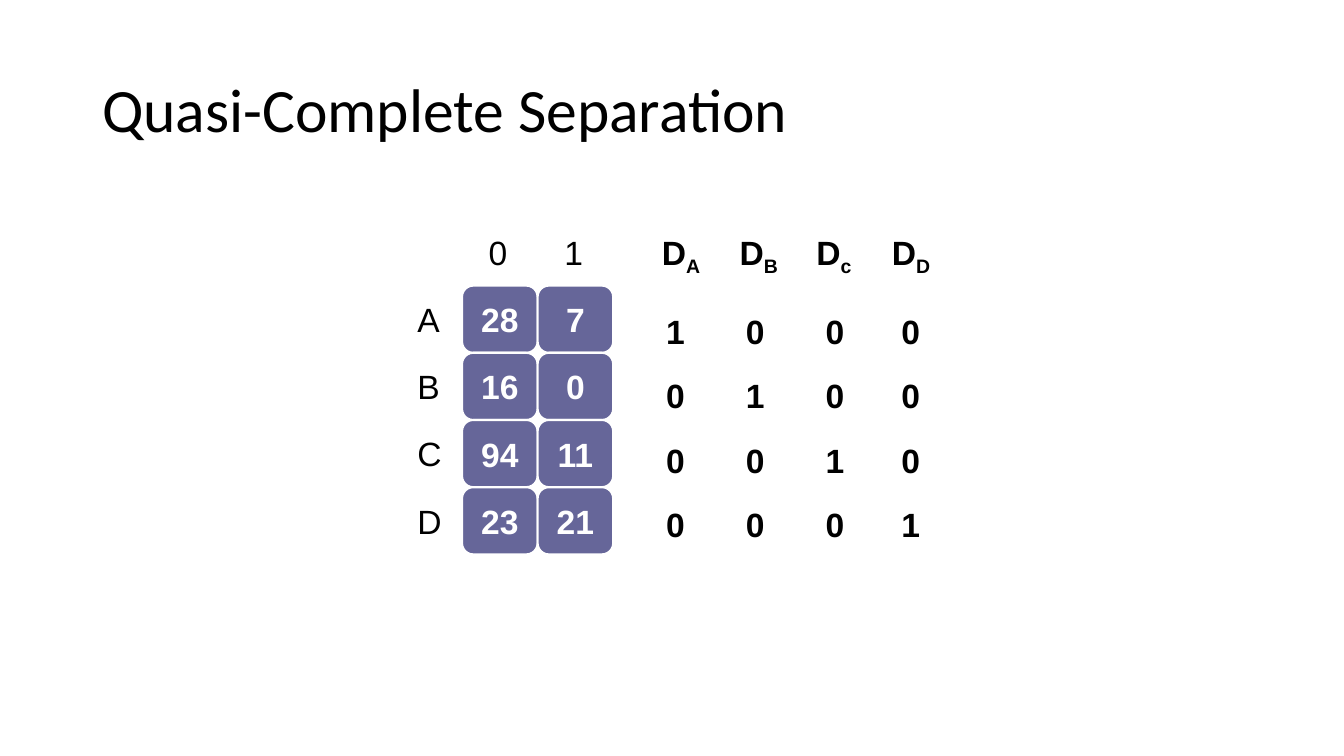
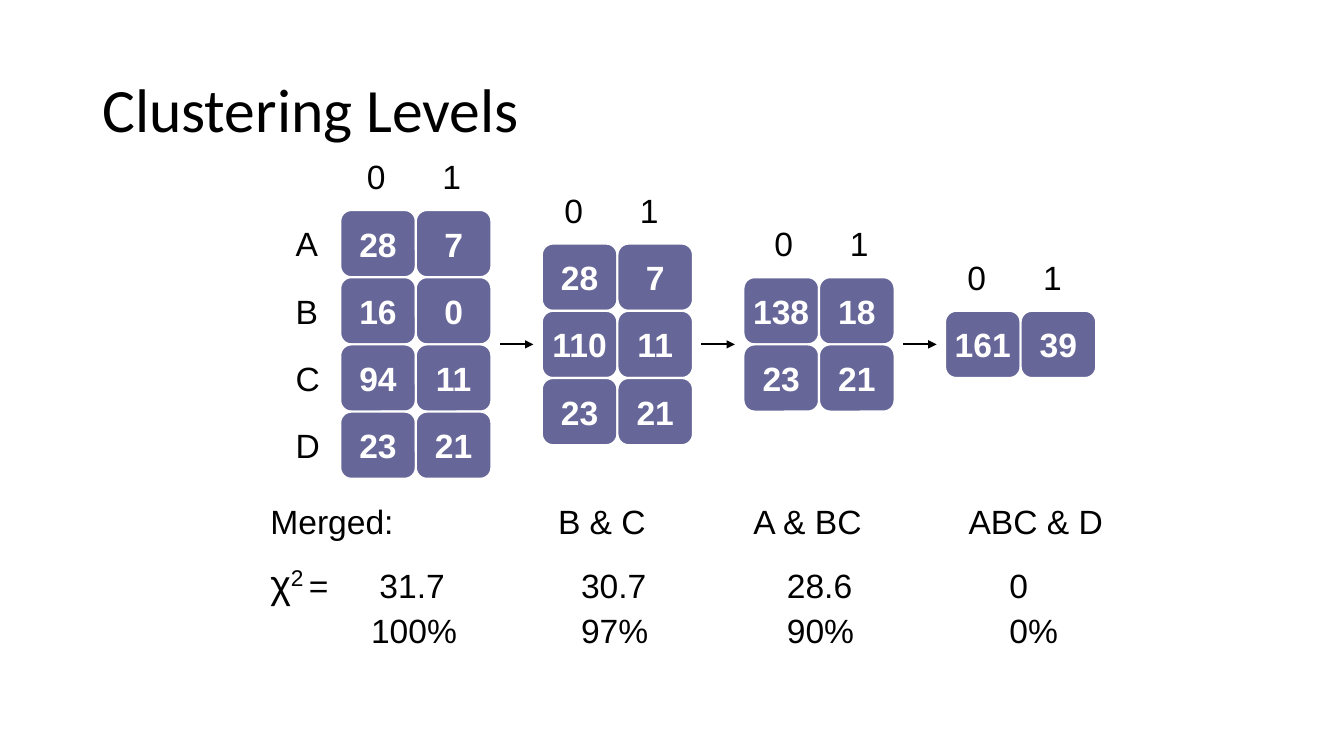
from lxml import etree
from pptx import Presentation
from pptx.dml.color import RGBColor
from pptx.enum.shapes import MSO_CONNECTOR, MSO_SHAPE
from pptx.enum.text import MSO_ANCHOR, PP_ALIGN
from pptx.oxml.ns import qn
from pptx.util import Pt

PX = 9525
COLORS = {"ink": "000000", "cell": "666699", "white": "FFFFFF"}
SANS, HEAD = "Arial", "Calibri"
ROUND = MSO_SHAPE.ROUNDED_RECTANGLE
STRAIGHT = MSO_CONNECTOR.STRAIGHT
MIDDLE, CENTER = MSO_ANCHOR.MIDDLE, PP_ALIGN.CENTER
CELL_W, CELL_H = 72, 64
TEXT_H = 48
COUNTS = [(28, 7), (16, 0), (94, 11), (23, 21)]
LEVELS = "ABCD"


def px(*sizes):
    return [size * PX for size in sizes]


def color(name):
    return RGBColor.from_string(COLORS[name])


def style(para, size=24, bold=False, ink="ink", face=SANS):
    font = para.font
    font.name, font.size, font.bold = face, Pt(size), bold
    font.color.rgb = color(ink)


def text(slide, box, lines, spacing=None, **look):
    """Place one paragraph for each line and return the text frame."""
    frame = slide.shapes.add_textbox(*px(*box)).text_frame
    frame.word_wrap = True
    frame.text = "\n".join(lines)
    for para in frame.paragraphs:
        style(para, **look)
        if spacing:
            para.line_spacing = spacing
    return frame


def add_run(para, words, base=0, size=None):
    """Add a run, raised or lowered by base percent."""
    run = para.add_run()
    run.text = words
    if base:
        run._r.get_or_add_rPr().set("baseline", str(base * 1000))
    if size:
        run.font.size = Pt(size)


def title(slide, words):
    frame = text(slide, (88, 38, 1104, 139), [words], 0.9, size=44, face=HEAD)
    frame.vertical_anchor = MIDDLE


def cell(slide, x, y, value):
    shape = slide.shapes.add_shape(ROUND, *px(x, y, CELL_W, CELL_H))
    shape.shadow.inherit = False
    shape.fill.solid()
    shape.fill.fore_color.rgb = color("cell")
    shape.line.color.rgb = color("white")
    shape.line.width = Pt(1.5)
    frame = shape.text_frame
    frame.word_wrap = False
    frame.vertical_anchor = MIDDLE
    frame.text = str(value)
    para = frame.paragraphs[0]
    para.alignment = CENTER
    style(para, bold=True, ink="white")


def grid(slide, x, y, rows, names="", inset=16):
    """Draw counts from (x, y), with outcomes above and names at the left."""
    for col in range(2):
        text(slide, (x + inset + col * CELL_W, y - 56, 40, TEXT_H), [str(col)])
    for row, name in enumerate(names):
        text(slide, (x - 52, y + 8 + row * CELL_H, 46, TEXT_H), [name])
    for row, pair in enumerate(rows):
        for col, value in enumerate(pair):
            cell(slide, x + col * CELL_W, y + row * CELL_H, value)


def arrow(slide, x, y):
    line = slide.shapes.add_connector(STRAIGHT, *px(x, y, x + 32, y))
    line.line.color.rgb = color("ink")
    line.line.width = Pt(1.5)
    tip = etree.SubElement(line.line._get_or_add_ln(), qn("a:tailEnd"))
    tip.set("type", "triangle")
    etree.SubElement(line._element.spPr, qn("a:effectLst"))


def dummies(slide, y):
    """Draw the dummy variables beside a grid whose top is y."""
    spots = zip("ABcD", (621, 695, 768, 840), (625, 701, 777, 849))
    for spot, (sub, head, x) in enumerate(spots):
        frame = text(slide, (head, y - 56, 66, TEXT_H), ["D"], bold=True)
        add_run(frame.paragraphs[0], sub, -25)
        flags = [str(int(row == spot)) for row in range(len(LEVELS))]
        text(slide, (x, y - 4, 40, 258), flags, 1.6, bold=True)


def split_slide(slide):
    title(slide, "Quasi-Complete Separation")
    grid(slide, 440, 272, COUNTS, LEVELS)
    dummies(slide, 272)


def steps(slide, x, mid):
    """Draw the shrinking grids, centred on mid, with arrows between."""
    stages = [
        (COUNTS, LEVELS, 16),
        ([(28, 7), (110, 11), (23, 21)], "", 12),
        ([(138, 18), (23, 21)], "", 20),
        ([(161, 39)], "", 12),
    ]
    for step, (rows, names, inset) in enumerate(stages):
        left = x + step * 192
        grid(slide, left, mid - len(rows) * CELL_H // 2, rows, names, inset)
        if step:
            arrow(slide, left - 40, mid)


def results(slide, x, y):
    """Draw the merged levels and the chi-square kept at each step."""
    merged = [("Merged:", 0), ("B & C", 274), ("A & BC", 460), ("ABC & D", 665)]
    for words, left in merged:
        text(slide, (x + left, y, 160, TEXT_H), [words])
    para = text(slide, (x, y + 56, 90, 55), ["χ"], size=28).paragraphs[0]
    add_run(para, "2", 30)
    add_run(para, " ", 30, 24)
    add_run(para, "=", size=24)
    scores = [("31.7", 104, "100%", 96), ("30.7", 296, "97%", 296),
              ("28.6", 492, "90%", 492), ("0", 704, "0%", 704)]
    for score, left, share, start in scores:
        text(slide, (x + left, y + 61, 110, TEXT_H), [score])
        text(slide, (x + start, y + 104, 110, TEXT_H), [share])


def merge_slide(slide):
    title(slide, "Clustering Levels")
    steps(slide, 324, 328)
    results(slide, 248, 472)


def main():
    deck = Presentation()
    deck.slide_width, deck.slide_height = px(1280, 720)
    for build in (split_slide, merge_slide):
        build(deck.slides.add_slide(deck.slide_layouts[6]))
    deck.save("out.pptx")


if __name__ == "__main__":
    main()
